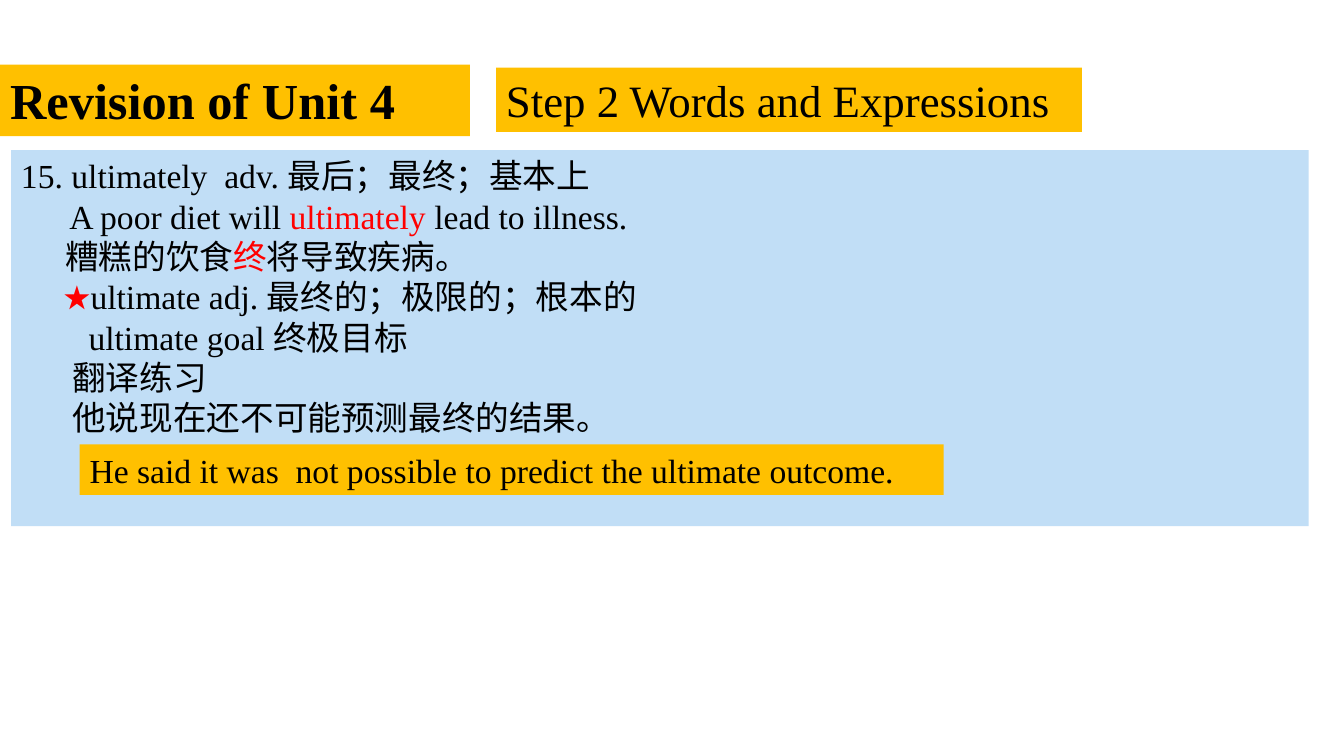
from dataclasses import dataclass

from pptx import Presentation
from pptx.dml.color import RGBColor as Rgb
from pptx.enum.text import MSO_ANCHOR as Anchor, MSO_AUTO_SIZE as Fit, PP_ALIGN as Align
from pptx.shapes.base import BaseShape as Shape
from pptx.util import Emu, Pt

PX = 9144
FACE = "Times New Roman"
GOLD, BLUE, BLACK, RED = "FFC000", "C1DEF6", "000000", "FF0000"


@dataclass
class Line:
    text: str
    inset: int = 0
    key: str = ""


@dataclass
class Panel:
    left: int
    top: int
    width: int
    height: int
    fill: str
    size: int
    lines: list[Line]
    bold: bool = False


TITLE = Panel(0, 64, 466, 71, GOLD, 36, [Line("Revision of Unit 4")], True)
STEP = Panel(492, 67, 581, 64, GOLD, 32, [Line("Step 2 Words and Expressions")])
WORDS = Panel(11, 149, 1287, 373, BLUE, 24, [
    Line("15. ultimately  adv. 最后；最终；基本上"),
    Line("A poor diet will ultimately lead to illness.", 48, "ultimately"),
    Line("糟糕的饮食终将导致疾病。", 44, "终"),
    Line("★ultimate adj. 最终的；极限的；根本的", 42, "★"),
    Line("ultimate goal 终极目标", 67),
    Line("翻译练习", 51),
    Line("他说现在还不可能预测最终的结果。", 51),
])
REPLY = Panel(79, 441, 857, 50, GOLD, 24, [
    Line("He said it was  not possible to predict the ultimate outcome."),
])


def px(count: int) -> Emu:
    return Emu(count * PX)


def tint(hue: str) -> Rgb:
    return Rgb.from_string(hue)


def write(para, line: Line, size: int, bold: bool) -> None:
    if line.key:
        head, key, tail = line.text.partition(line.key)
        for part in filter(None, (head, key, tail)):
            para.add_run().text = part
    else:
        para.text = line.text
    para.alignment = Align.LEFT
    if line.inset:
        props = para._p.get_or_add_pPr()
        props.set("marL", str(px(line.inset)))
        props.set("indent", "0")
    for run in para.runs:
        font = run.font
        font.name, font.size, font.bold = FACE, Pt(size), bold
        font.color.rgb = tint(RED if run.text == line.key else BLACK)


def dress(shape: Shape, panel: Panel) -> None:
    shape.left, shape.top = px(panel.left), px(panel.top)
    shape.width, shape.height = px(panel.width), px(panel.height)
    shape.fill.solid()
    shape.fill.fore_color.rgb = tint(panel.fill)
    frame = shape.text_frame
    frame.word_wrap = True
    frame.auto_size = Fit.NONE
    frame.vertical_anchor = Anchor.TOP
    for spot, line in enumerate(panel.lines):
        para = frame.add_paragraph() if spot else frame.paragraphs[0]
        write(para, line, panel.size, panel.bold)


def main() -> None:
    deck = Presentation()
    deck.slide_width, deck.slide_height = px(1333), px(750)
    slide = deck.slides.add_slide(deck.slide_layouts[5])
    dress(slide.shapes.title, TITLE)
    for panel in (STEP, WORDS, REPLY):
        dress(slide.shapes.add_textbox(0, 0, 0, 0), panel)
    deck.save("out.pptx")


if __name__ == "__main__":
    main()
